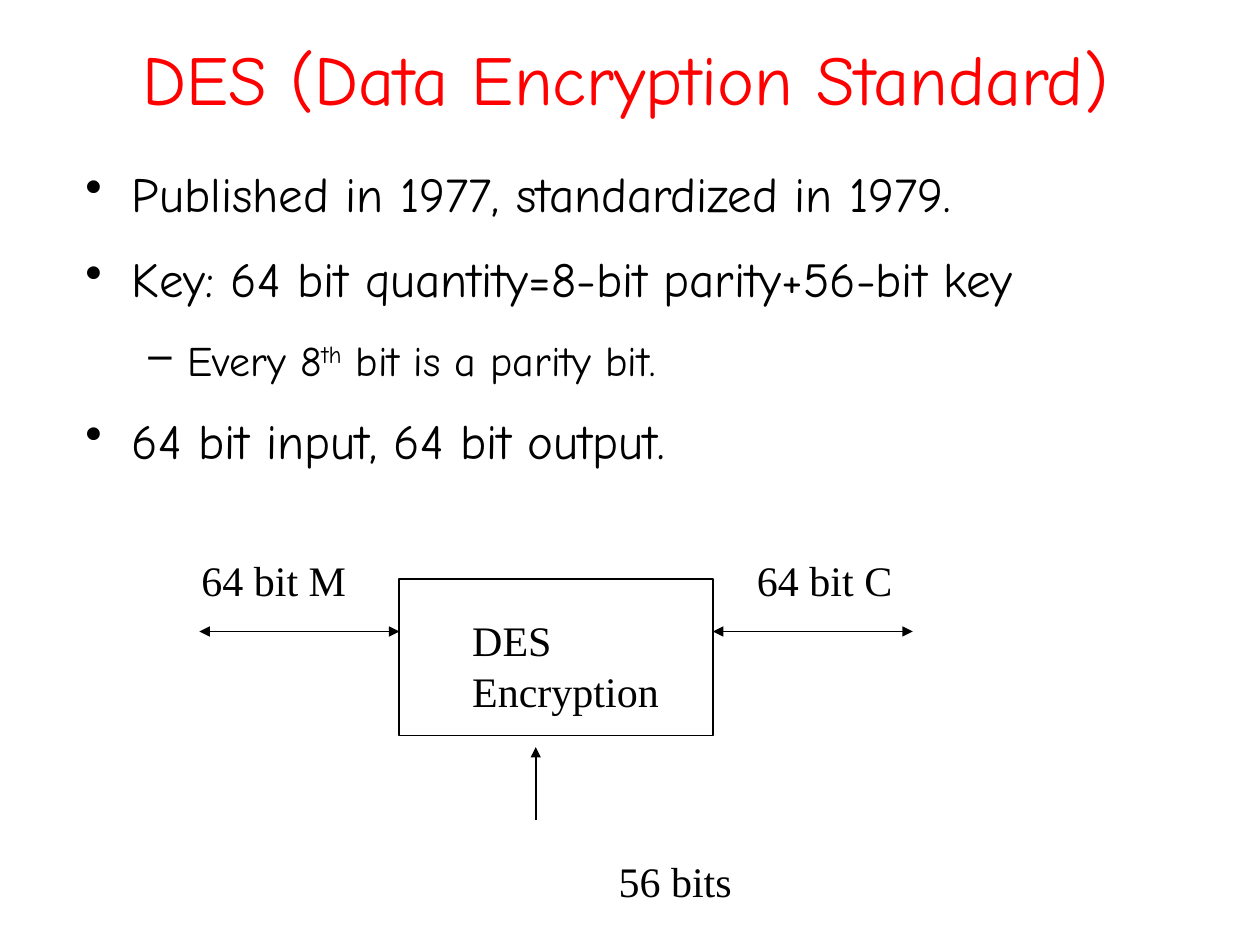
from lxml.etree import SubElement
from pptx import Presentation
from pptx.dml.color import RGBColor
from pptx.enum.shapes import MSO_CONNECTOR, MSO_SHAPE
from pptx.enum.text import MSO_ANCHOR, PP_ALIGN
from pptx.oxml.ns import qn
from pptx.util import Cm, Pt

BLACK = RGBColor(0x00, 0x00, 0x00)
RED = RGBColor(0xFF, 0x00, 0x00)
HEADING_FONT = "Comic Neue"
LABEL_FONT = "Times New Roman"

TITLE = "DES (Data Encryption Standard)"
TITLE_AREA = (0.64, 0.2, 23.93, 2.74)
BODY_AREA = (1.47, 3.18, 22.35, 15.44)
POINTS = [
    (0, [("Published in 1977, standardized in 1979.", 0)]),
    (0, [("Key: 64 bit quantity=8-bit parity+56-bit key", 0)]),
    (1, [("Every 8", 0), ("th", 30), (" bit is a parity bit.", 0)]),
    (0, [("64 bit input, 64 bit output.", 0)]),
]
LEVELS = [
    {"bullet": "•", "size": 28, "margin": 0.94, "hanging": 0.94},
    {"bullet": "–", "size": 24, "margin": 2.06, "hanging": 0.79},
]

CIPHER_BOX = (8.05, 11.68, 6.32, 3.15)
LABELS = [
    (["DES", "Encryption"], (9.27, 12.27, 4.29, 2.29)),
    (["64 bit M"], (3.81, 11.05, 3.43, 1.27)),
    (["64 bit C"], (15.01, 11.05, 3.25, 1.27)),
    (["56 bits"], (12.22, 17.12, 2.79, 1.27)),
]
FLOW_Y = 12.73
FLOW_LENGTH = 4.03
BOX_LEFT = CIPHER_BOX[0]
BOX_RIGHT = CIPHER_BOX[0] + CIPHER_BOX[2]
ARROWS = [
    ((BOX_LEFT - FLOW_LENGTH, FLOW_Y), (BOX_LEFT, FLOW_Y), ("headEnd", "tailEnd")),
    ((BOX_RIGHT, FLOW_Y), (BOX_RIGHT + FLOW_LENGTH, FLOW_Y), ("headEnd", "tailEnd")),
    ((10.8, 16.54), (10.8, 15.06), ("tailEnd",)),
]


def lengths(values):
    return [Cm(value) for value in values]


def apply_format(target, values):
    for name, value in values.items():
        setattr(target, name, value)


def add_text_area(slide, area, wrap=True):
    frame = slide.shapes.add_textbox(*lengths(area)).text_frame
    frame.word_wrap = wrap
    return frame


def next_paragraph(frame, index):
    return frame.add_paragraph() if index else frame.paragraphs[0]


def add_run(paragraph, text, font_name, size, color, baseline=0):
    run = paragraph.add_run()
    run.text = text
    apply_format(run.font, {"name": font_name, "size": Pt(size)})
    run.font.color.rgb = color
    if baseline:
        run.font._element.set("baseline", str(baseline * 1000))


def add_title(slide):
    frame = add_text_area(slide, TITLE_AREA)
    frame.vertical_anchor = MSO_ANCHOR.MIDDLE
    heading = frame.paragraphs[0]
    apply_format(heading, {"alignment": PP_ALIGN.CENTER, "space_before": Pt(12), "space_after": Pt(3)})
    add_run(heading, TITLE, HEADING_FONT, 40, RED)


def add_points(slide):
    frame = add_text_area(slide, BODY_AREA)
    for index, (level, parts) in enumerate(POINTS):
        style = LEVELS[level]
        point = next_paragraph(frame, index)
        apply_format(point, {"level": level, "space_before": Pt(12), "space_after": Pt(3)})
        properties = point._p.get_or_add_pPr()
        properties.set("marL", str(Cm(style["margin"])))
        properties.set("indent", str(-Cm(style["hanging"])))
        SubElement(properties, qn("a:buChar"), char=style["bullet"])
        for text, baseline in parts:
            add_run(point, text, HEADING_FONT, style["size"], BLACK, baseline)


def add_cipher_box(slide):
    box = slide.shapes.add_shape(MSO_SHAPE.RECTANGLE, *lengths(CIPHER_BOX))
    box.shadow.inherit = False
    box.fill.background()
    box.line.color.rgb = BLACK
    box.line.width = Pt(1)


def add_label(slide, lines, area):
    frame = add_text_area(slide, area, wrap=False)
    for index, line in enumerate(lines):
        add_run(next_paragraph(frame, index), line, LABEL_FONT, 24, BLACK)


def add_arrow(slide, start, end, heads):
    arrow = slide.shapes.add_connector(MSO_CONNECTOR.STRAIGHT, *lengths(start + end))
    arrow.line.color.rgb = BLACK
    arrow.line.width = Pt(1)
    for head in heads:
        SubElement(arrow.line._get_or_add_ln(), qn(f"a:{head}"), type="triangle")
    SubElement(arrow._element.spPr, qn("a:effectLst"))


def main():
    deck = Presentation()
    apply_format(deck, {"slide_width": Cm(25.4), "slide_height": Cm(19.05)})
    slide = deck.slides.add_slide(deck.slide_layouts[6])
    add_title(slide)
    add_points(slide)
    add_cipher_box(slide)
    for lines, area in LABELS:
        add_label(slide, lines, area)
    for start, end, heads in ARROWS:
        add_arrow(slide, start, end, heads)
    deck.save("out.pptx")


if __name__ == "__main__":
    main()
